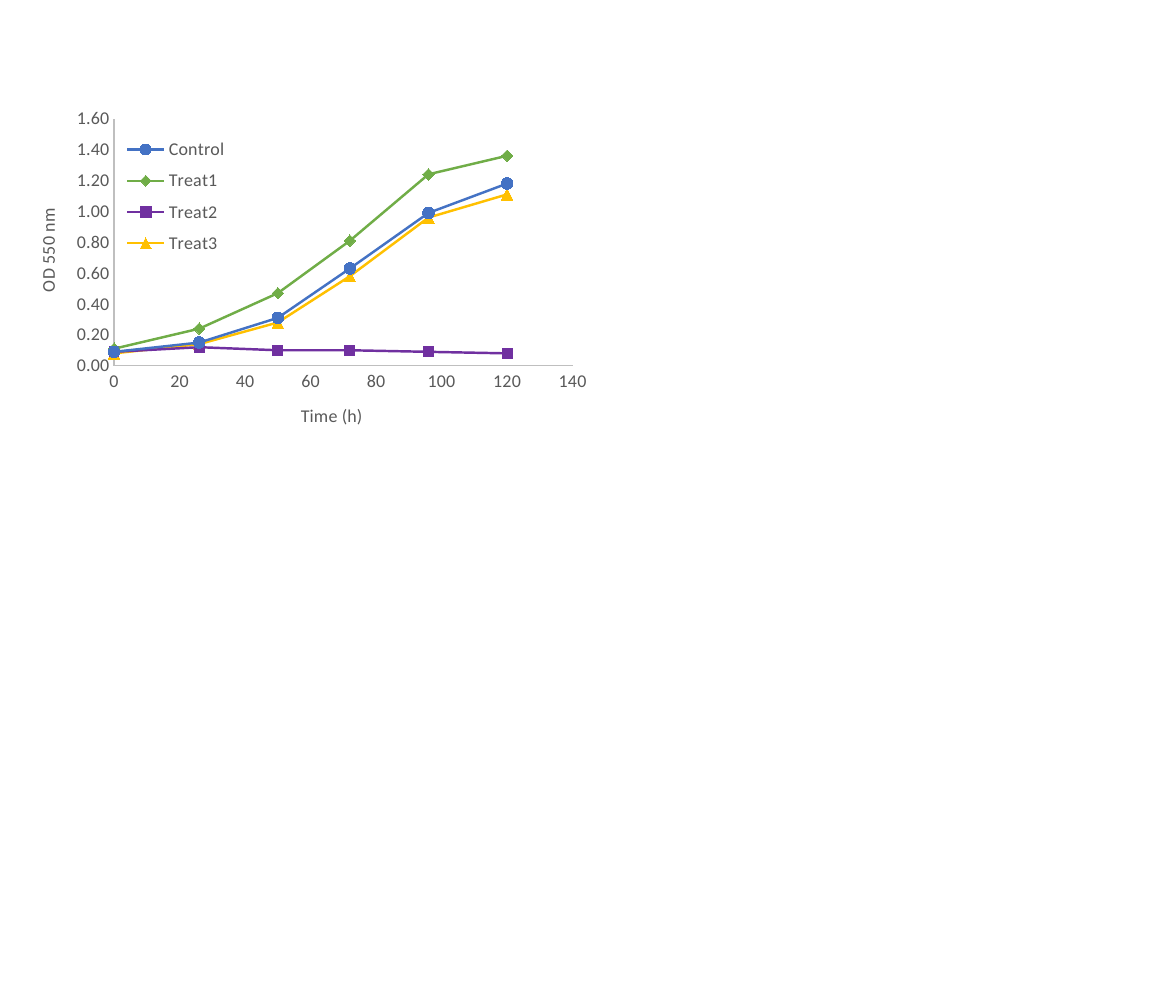
from dataclasses import dataclass

from lxml import etree
from pptx import Presentation
from pptx.chart.data import XyChartData
from pptx.dml.color import RGBColor
from pptx.enum.chart import XL_CHART_TYPE as ChartType
from pptx.enum.chart import XL_LEGEND_POSITION as LegendPosition
from pptx.enum.chart import XL_MARKER_STYLE as Marker
from pptx.enum.chart import XL_TICK_MARK as TickMark
from pptx.oxml.ns import qn
from pptx.slide import Slide
from pptx.util import Inches, Pt

HOURS = [0, 26, 50, 72, 96, 120]
GROWTH = [
    ("Control", "4472C4", Marker.CIRCLE, 7, [0.09, 0.15, 0.31, 0.63, 0.99, 1.18]),
    ("Treat1", "70AD47", Marker.DIAMOND, 7, [0.11, 0.24, 0.47, 0.81, 1.24, 1.36]),
    ("Treat2", "7030A0", Marker.SQUARE, 6, [0.09, 0.12, 0.1, 0.1, 0.09, 0.08]),
    ("Treat3", "FFC000", Marker.TRIANGLE, 7, [0.08, 0.14, 0.28, 0.58, 0.96, 1.11]),
]


def rgb(color):
    return RGBColor.from_string(color)


@dataclass
class GrowthSlide:
    slide: Slide
    font_name: str = "Calibri"
    font_size: int = 11
    text_color: str = "595959"
    axis_color: str = "BFBFBF"

    def style_font(self, font):
        font.name = self.font_name
        font.size = Pt(self.font_size)
        font.bold = False
        font.color.rgb = rgb(self.text_color)

    def place(self, parent, index, left, top, width, height, inner=False):
        for old in parent.findall(qn("c:layout")):
            parent.remove(old)
        layout = etree.Element(qn("c:layout"))
        manual = etree.SubElement(layout, qn("c:manualLayout"))
        settings = [("layoutTarget", "inner")] if inner else []
        settings += [("xMode", "edge"), ("yMode", "edge")]
        settings += [("x", left), ("y", top), ("w", width), ("h", height)]
        for tag, value in settings:
            etree.SubElement(manual, qn(f"c:{tag}")).set("val", str(value))
        parent.insert(index, layout)

    def axis(self, axis, title, maximum, step, number_format):
        axis.minimum_scale = 0
        axis.maximum_scale = maximum
        axis.major_unit = step
        axis.has_major_gridlines = False
        axis.major_tick_mark = axis.minor_tick_mark = TickMark.NONE
        axis.format.line.color.rgb = rgb(self.axis_color)
        axis.format.line.width = Pt(0.75)
        axis.tick_labels.number_format = number_format
        axis.tick_labels.number_format_is_linked = False
        self.style_font(axis.tick_labels.font)
        heading = axis.axis_title.text_frame
        heading.text = title
        self.style_font(heading.paragraphs[0].font)

    def legend(self, chart):
        chart.has_legend = True
        legend = chart.legend
        legend.position = LegendPosition.RIGHT
        legend.include_in_layout = True
        self.style_font(legend.font)
        self.place(legend._element, 1, 0.18, 0.08, 0.19, 0.38)

    def curve(self, series, color, marker, marker_size):
        series.smooth = False
        series.format.line.color.rgb = rgb(color)
        series.format.line.width = Pt(1.5)
        series.marker.style = marker
        series.marker.size = marker_size
        for part in (series.marker.format.fill, series.marker.format.line.fill):
            part.solid()
            part.fore_color.rgb = rgb(color)

    def growth_chart(self, left, top, width, height):
        data = XyChartData()
        for name, _, _, _, densities in GROWTH:
            series = data.add_series(name)
            for hour, density in zip(HOURS, densities):
                series.add_data_point(hour, density)
        chart = self.slide.shapes.add_chart(
            ChartType.XY_SCATTER_LINES,
            Inches(left), Inches(top), Inches(width), Inches(height), data,
        ).chart
        chart.has_title = False
        self.style_font(chart.font)
        chart.plots[0].vary_by_categories = False
        for series, (_, color, marker, size, _) in zip(chart.plots[0].series, GROWTH):
            self.curve(series, color, marker, size)
        self.axis(chart.category_axis, "Time (h)", 140, 20, "General")
        self.axis(chart.value_axis, "OD 550 nm", 1.6, 0.2, "0.00")
        density_title = chart.value_axis.axis_title.text_frame
        density_title._txBody.bodyPr.set("rot", "-5400000")
        self.legend(chart)
        plot_area = chart._chartSpace.chart.plotArea
        self.place(plot_area, 0, 0.17, 0.05, 0.78, 0.7, inner=True)


def main():
    deck = Presentation()
    deck.slide_width = Inches(10)
    deck.slide_height = Inches(8.5)
    growth = GrowthSlide(deck.slides.add_slide(deck.slide_layouts[6]))
    growth.growth_chart(0.12, 0.86, 5, 3)
    deck.save("out.pptx")


if __name__ == "__main__":
    main()
